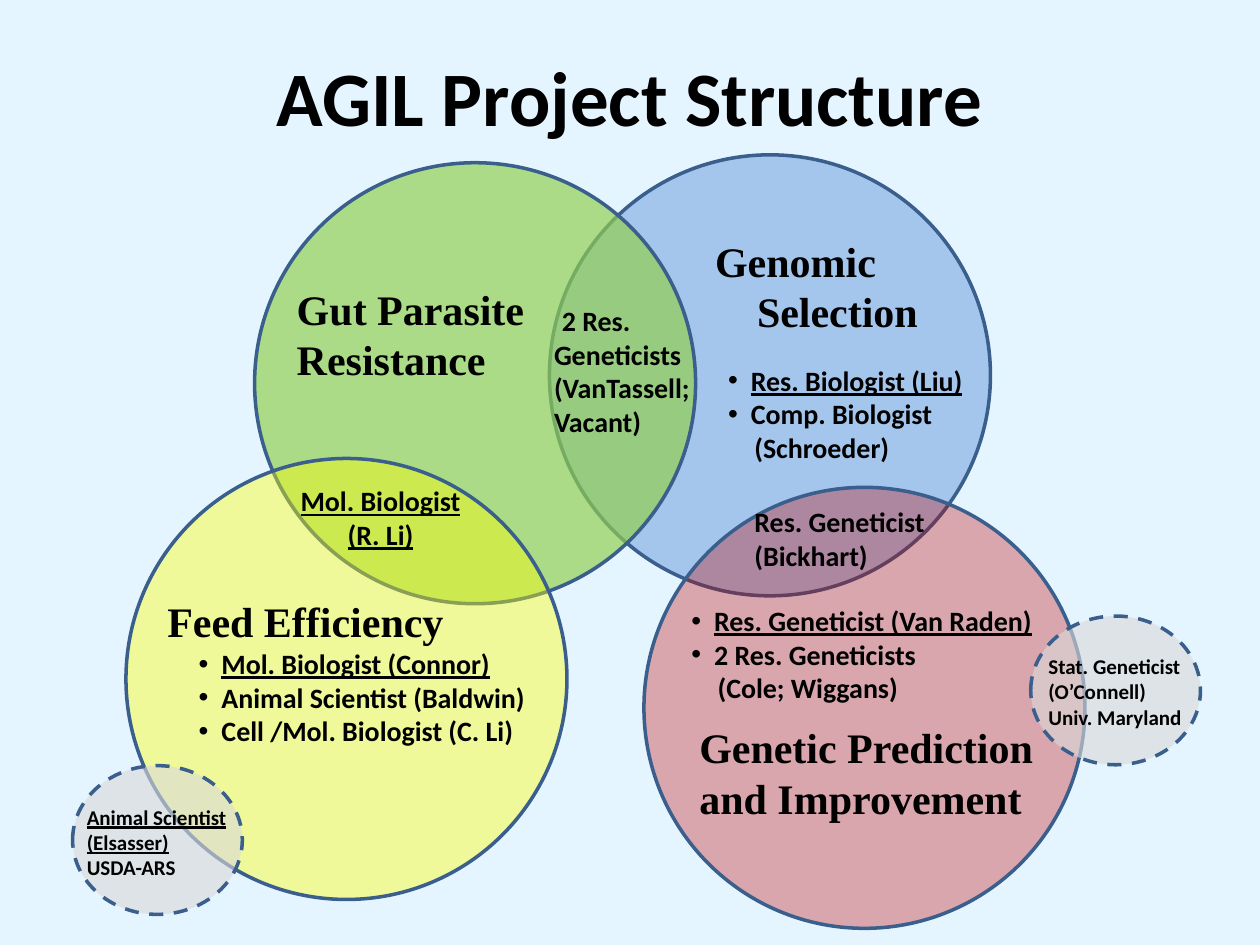
from dataclasses import dataclass

from lxml.etree import SubElement
from pptx import Presentation
from pptx.dml.color import RGBColor
from pptx.enum.dml import MSO_LINE
from pptx.enum.shapes import MSO_SHAPE
from pptx.enum.text import MSO_ANCHOR, PP_ALIGN
from pptx.oxml.ns import qn
from pptx.util import Pt

SKY = RGBColor(0xE5, 0xF5, 0xFF)
BLACK = RGBColor(0x00, 0x00, 0x00)
OUTLINE = RGBColor(0x3A, 0x5F, 0x8C)
BLUE = RGBColor(0x55, 0x8E, 0xD5)
GREEN = RGBColor(0x92, 0xD0, 0x50)
YELLOW = RGBColor(0xFF, 0xFF, 0x00)
RED = RGBColor(0xC0, 0x00, 0x00)
GREY = RGBColor(0xD9, 0xD9, 0xD9)

BODY_FONT = "Calibri"
HEADING_FONT = "Times New Roman"
AREA_DIAMETER = 252
BULLET_GAP = 13
CONTINUATION = 15


@dataclass
class Line:
    text: str
    underline: bool = False
    bullet: bool = False
    margin: float = 0
    first: float = 0


@dataclass
class VennSlide:
    slide: object
    outline_width: float = 2
    body_size: float = 16
    heading_size: float = 24
    partner_size: float = 12

    def background(self, color):
        fill = self.slide.background.fill
        fill.solid()
        fill.fore_color.rgb = color

    def add_text_run(self, paragraph, text, size, font, underline=False):
        run = paragraph.add_run()
        run.text = text
        run.font.size = Pt(size)
        run.font.name = font
        run.font.bold = True
        run.font.underline = underline
        run.font.color.rgb = BLACK

    def title(self, text):
        title = self.slide.shapes.title
        title.left, title.top = Pt(36), Pt(23)
        title.width, title.height = Pt(648), Pt(63)
        title.text_frame.vertical_anchor = MSO_ANCHOR.MIDDLE
        paragraph = title.text_frame.paragraphs[0]
        paragraph.alignment = PP_ALIGN.CENTER
        self.add_text_run(paragraph, text, 44, BODY_FONT)

    def ellipse(self, left, top, width, height, color, opacity):
        ellipse = self.slide.shapes.add_shape(
            MSO_SHAPE.OVAL, Pt(left), Pt(top), Pt(width), Pt(height))
        ellipse.shadow.inherit = False
        ellipse.fill.solid()
        ellipse.fill.fore_color.rgb = color
        srgb = ellipse.fill._xPr.find(qn("a:solidFill"))[0]
        SubElement(srgb, qn("a:alpha"), val=str(opacity * 1000))
        ellipse.line.color.rgb = OUTLINE
        ellipse.line.width = Pt(self.outline_width)
        return ellipse

    def area(self, left, top, color, opacity):
        self.ellipse(left, top, AREA_DIAMETER, AREA_DIAMETER, color, opacity)

    def partner(self, left, top):
        ellipse = self.ellipse(left, top, 97, 85, GREY, 61)
        ellipse.line.dash_style = MSO_LINE.DASH

    def text(self, left, top, width, height, lines, size, font, align):
        box = self.slide.shapes.add_textbox(Pt(left), Pt(top), Pt(width), Pt(height))
        frame = box.text_frame
        frame.word_wrap = True
        for index, line in enumerate(lines):
            paragraph = frame.add_paragraph() if index else frame.paragraphs[0]
            paragraph.alignment = align
            properties = paragraph._p.get_or_add_pPr()
            margin = BULLET_GAP if line.bullet else line.margin
            first = -BULLET_GAP if line.bullet else line.first
            properties.set("marL", str(Pt(margin)))
            properties.set("indent", str(Pt(first)))
            if line.bullet:
                SubElement(properties, qn("a:buFont"), typeface="Arial")
                SubElement(properties, qn("a:buChar"), char="•")
            self.add_text_run(paragraph, line.text, size, font, line.underline)

    def heading(self, left, top, width, height, *lines):
        self.text(left, top, width, height, lines,
                  self.heading_size, HEADING_FONT, PP_ALIGN.LEFT)

    def staff(self, left, top, width, height, *lines, align=PP_ALIGN.LEFT):
        self.text(left, top, width, height, lines, self.body_size, BODY_FONT, align)

    def partner_staff(self, left, top, *lines):
        self.text(left, top, 112, 51, lines,
                  self.partner_size, BODY_FONT, PP_ALIGN.LEFT)


def main():
    presentation = Presentation()
    presentation.slide_width, presentation.slide_height = Pt(720), Pt(540)
    venn = VennSlide(presentation.slides.add_slide(presentation.slide_layouts[5]))
    venn.background(SKY)
    venn.title("AGIL Project Structure")

    venn.area(314, 88.5, BLUE, 45)
    venn.area(145.5, 93, GREEN, 69)
    venn.area(72, 262, YELLOW, 40)
    venn.area(368, 278.5, RED, 32)

    venn.staff(106.5, 366, 216, 66,
               Line("Mol. Biologist (Connor)", underline=True, bullet=True),
               Line("Animal Scientist (Baldwin)", bullet=True),
               Line("Cell /Mol. Biologist (C. Li)", bullet=True))
    venn.staff(136, 273, 163, 46,
               Line("Mol. Biologist", underline=True),
               Line("(R. Li)", underline=True), align=PP_ALIGN.CENTER)
    venn.heading(88.5, 337, 190, 36, Line("Feed Efficiency"))
    venn.heading(162.5, 158.5, 150, 66, Line("Gut Parasite"), Line("Resistance"))

    venn.partner(41.5, 437.5)
    venn.partner_staff(42.5, 456,
                       Line("Animal Scientist", underline=True),
                       Line("(Elsasser)", underline=True),
                       Line("USDA-ARS"))

    venn.heading(401.5, 131, 140, 66, Line("Genomic"), Line("Selection", margin=24))
    venn.staff(409, 204, 216, 66,
               Line("Res. Biologist (Liu)", underline=True, bullet=True),
               Line("Comp. Biologist", bullet=True),
               Line("(Schroeder)", margin=CONTINUATION))
    venn.staff(309.5, 170, 112, 85,
               Line("2 Res. Geneticists (VanTassell;", first=4.5),
               Line("Vacant)"))
    venn.heading(392.5, 409, 227, 66, Line("Genetic Prediction and Improvement"))
    venn.staff(388, 341.5, 216, 66,
               Line("Res. Geneticist (Van Raden)", underline=True, bullet=True),
               Line("2 Res. Geneticists", bullet=True),
               Line("(Cole; Wiggans)", margin=CONTINUATION))
    venn.staff(424, 285, 112, 46, Line("Res. Geneticist (Bickhart)"))

    venn.partner(589, 352)
    venn.partner_staff(592, 370,
                       Line("Stat. Geneticist"),
                       Line("(O’Connell)"),
                       Line("Univ. Maryland"))
    presentation.save("out.pptx")


if __name__ == "__main__":
    main()
